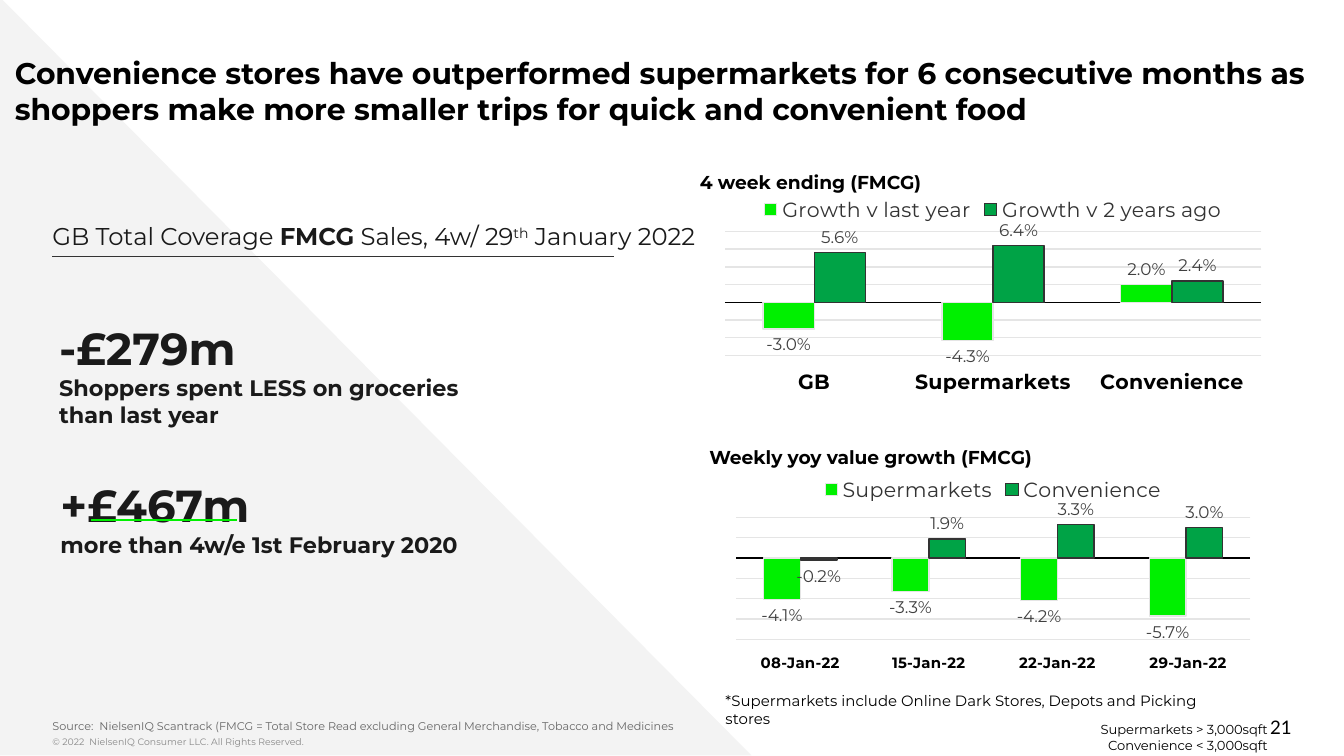
import pptx
import pptx.chart.data
import pptx.dml.color
import pptx.enum.chart
import pptx.enum.shapes
import pptx.enum.text
import pptx.oxml
import pptx.oxml.ns
import pptx.util

Inches = pptx.util.Inches
Pt = pptx.util.Pt
Align = pptx.enum.text.PP_ALIGN
Anchor = pptx.enum.text.MSO_ANCHOR

COLORS = {
    "black": "000000",
    "ink": "1A1A1A",
    "dark": "333333",
    "label": "404040",
    "source": "666666",
    "copyright": "888888",
    "grid": "E5E5E5",
    "wedge": "F3F3F3",
    "lime": "00F000",
    "green": "00A346",
}
FONT = "Montserrat"


def rgb(name):
    return pptx.dml.color.RGBColor.from_string(COLORS[name])


def style_font(font, size, color, bold=False, name=FONT):
    font.size = Pt(size)
    font.name = name
    font.bold = bold
    font.color.rgb = rgb(color)


def style_line(line, color, width=0.75):
    line.color.rgb = rgb(color)
    line.width = Pt(width)


def add_text(slide, box, lines, color="black", align=Align.LEFT,
             anchor=Anchor.TOP, insets=(0.1, 0.05), wrap=True, font=FONT):
    """Each line is a list of (text, size, bold) runs; a final newline breaks the line."""
    frame = slide.shapes.add_textbox(*map(Inches, box)).text_frame
    frame.word_wrap = wrap
    frame.vertical_anchor = anchor
    frame.margin_left = frame.margin_right = Inches(insets[0])
    frame.margin_top = frame.margin_bottom = Inches(insets[1])
    for index, runs in enumerate(lines):
        paragraph = frame.add_paragraph() if index else frame.paragraphs[0]
        paragraph.alignment = align
        for text, size, bold in runs:
            run = paragraph.add_run()
            run.text = text.rstrip("\n")
            style_font(run.font, size, color, bold, font)
            if text.endswith("\n"):
                paragraph.add_line_break()
    return frame


def add_rule(slide, left, right, y, color, width):
    rule = slide.shapes.add_connector(
        pptx.enum.shapes.MSO_CONNECTOR.STRAIGHT,
        Inches(left), Inches(y), Inches(right), Inches(y))
    style_line(rule.line, color, width)
    rule._element.spPr.append(pptx.oxml.parse_xml(
        f'<a:effectLst {pptx.oxml.ns.nsdecls("a")}/>'))


def add_wedge(slide):
    wedge = slide.shapes.add_shape(
        pptx.enum.shapes.MSO_SHAPE.RIGHT_TRIANGLE,
        Inches(0), Inches(-0.02), Inches(5.59), Inches(5.64))
    wedge.shadow.inherit = False
    wedge.fill.solid()
    wedge.fill.fore_color.rgb = rgb("wedge")
    wedge.line.fill.background()


def place_plot(chart, x, y, w, h):
    plot_area = chart._chartSpace.chart.plotArea
    for layout in plot_area.findall(pptx.oxml.ns.qn("c:layout")):
        plot_area.remove(layout)
    sizes = "".join(f'<c:{tag} val="{value}"/>'
                    for tag, value in zip("xywh", (x, y, w, h)))
    plot_area.insert(0, pptx.oxml.parse_xml(
        f'<c:layout {pptx.oxml.ns.nsdecls("c")}><c:manualLayout>'
        '<c:layoutTarget val="inner"/><c:xMode val="edge"/><c:yMode val="edge"/>'
        f'{sizes}</c:manualLayout></c:layout>'))


def add_growth_chart(slide, top, categories, series, category_size, plot_box,
                     minimum=None):
    growth = pptx.chart.data.CategoryChartData(number_format="0.0%")
    growth.categories = categories
    for name, values in series:
        growth.add_series(name, values)
    chart = slide.shapes.add_chart(
        pptx.enum.chart.XL_CHART_TYPE.COLUMN_CLUSTERED,
        Inches(5.31), Inches(top), Inches(4.16), Inches(1.62), growth).chart
    style_font(chart.font, 10, "black", name="Arial")
    chart.has_title = False

    chart.has_legend = True
    chart.legend.position = pptx.enum.chart.XL_LEGEND_POSITION.TOP
    chart.legend.include_in_layout = False
    style_font(chart.legend.font, 11, "dark")

    category_axis = chart.category_axis
    category_axis.tick_label_position = pptx.enum.chart.XL_TICK_LABEL_POSITION.LOW
    category_axis.major_tick_mark = pptx.enum.chart.XL_TICK_MARK.NONE
    style_font(category_axis.tick_labels.font, category_size, "black", True)
    style_line(category_axis.format.line, "black")

    value_axis = chart.value_axis
    value_axis.minimum_scale = minimum
    value_axis.has_major_gridlines = True
    style_line(value_axis.major_gridlines.format.line, "grid")
    value_axis.tick_labels.number_format = "0.0%"
    value_axis.tick_labels.number_format_is_linked = False
    value_axis.visible = False

    plot = chart.plots[0]
    plot.gap_width = 150
    plot.overlap = 0
    plot.vary_by_categories = False
    for columns, fill, outline in zip(plot.series, ("lime", "green"), ("grid", "dark")):
        columns.invert_if_negative = False
        columns.format.fill.solid()
        columns.format.fill.fore_color.rgb = rgb(fill)
        style_line(columns.format.line, outline)
        labels = columns.data_labels
        labels.show_value = True
        labels.number_format = "0.0%"
        labels.number_format_is_linked = False
        labels.position = pptx.enum.chart.XL_LABEL_POSITION.OUTSIDE_END
        style_font(labels.font, 9, "label")
    place_plot(chart, *plot_box)


def add_stat(slide, box, amount, meaning):
    add_text(slide, box, [[(amount + "\n", 24, True), (meaning, 12, True)]],
             "ink", anchor=Anchor.MIDDLE, insets=(0, 0))


def main():
    deck = pptx.Presentation()
    deck.slide_width, deck.slide_height = Inches(10), Inches(10 * 9 / 16)
    slide = deck.slides.add_slide(deck.slide_layouts[6])

    add_wedge(slide)
    add_text(slide, (0.39, 5.43, 5.54, 0.2),
             [[("© 2022  NielsenIQ Consumer LLC. All Rights Reserved.", 5, False)]],
             "copyright", insets=(0, 0.05))
    add_text(slide, (7.36, 5.26, 2.25, 0.3), [[("21", 10, False)]],
             align=Align.RIGHT, anchor=Anchor.MIDDLE, insets=(0, 0.05), font="Lato")
    add_text(slide, (0.11, 0.31, 9.88, 0.44),
             [[("Convenience stores have outperformed supermarkets for 6 consecutive "
                "months as shoppers make more smaller trips for quick and convenient food",
                16, True)]], insets=(0, 0.1))
    add_text(slide, (0.39, 5.3, 8.76, 0.2),
             [[("Source:  NielsenIQ Scantrack (FMCG = Total Store Read excluding "
                "General Merchandise, Tobacco and Medicines", 6, False)]],
             "source", insets=(0, 0.1))
    add_text(slide, (5.3, 5.1, 3.93, 0.37),
             [[("*Supermarkets include Online Dark Stores, Depots and Picking stores",
                8, False)]])

    add_growth_chart(
        slide, 1.35, ["GB", "Supermarkets", "Convenience"],
        [("Growth v last year", (-0.03, -0.043, 0.02)),
         ("Growth v 2 years ago", (0.056, 0.064, 0.024))],
        11, (0.02, 0.23, 0.96, 0.57), minimum=-0.06)
    add_growth_chart(
        slide, 3.43, ["08-Jan-22", "15-Jan-22", "22-Jan-22", " 29-Jan-22"],
        [("Supermarkets", (-0.041, -0.033, -0.042, -0.057)),
         ("Convenience", (-0.002, 0.019, 0.033, 0.03))],
        8, (0.04, 0.26, 0.92, 0.56))
    add_text(slide, (5.11, 1.22, 1.87, 0.27), [[("4 week ending (FMCG)", 10, True)]],
             wrap=False)
    add_text(slide, (5.18, 3.27, 2.7, 0.27),
             [[("Weekly yoy value growth (FMCG)", 10, True)]], wrap=False)

    add_rule(slide, 0.39, 4.57, 1.91, "dark", 0.75)
    coverage = add_text(
        slide, (0.39, 1.6, 4.79, 0.3),
        [[("GB Total Coverage ", 13, False), ("FMCG", 13, True),
          (" Sales, 4w/ 29", 13, False), ("th", 13, False),
          (" January 2022", 13, False)]], "ink", insets=(0, 0.05))
    ordinal = coverage.paragraphs[0].runs[3]
    ordinal.font._element.set("baseline", "30000")

    add_stat(slide, (0.44, 2.46, 3.03, 0.65), "-£279m",
             "Shoppers spent LESS on groceries than last year")
    add_stat(slide, (0.45, 3.53, 3.45, 0.65), "+£467m",
             "more than 4w/e 1st February 2020")
    add_rule(slide, 0.68, 1.76, 3.87, "lime", 1.5)
    add_text(slide, (6.56, 5.32, 2.97, 0.34),
             [[("Supermarkets > 3,000sqft", 7, False)],
              [("Convenience < 3,000sqft", 7, False)]], align=Align.RIGHT)

    deck.save("out.pptx")


if __name__ == "__main__":
    main()
